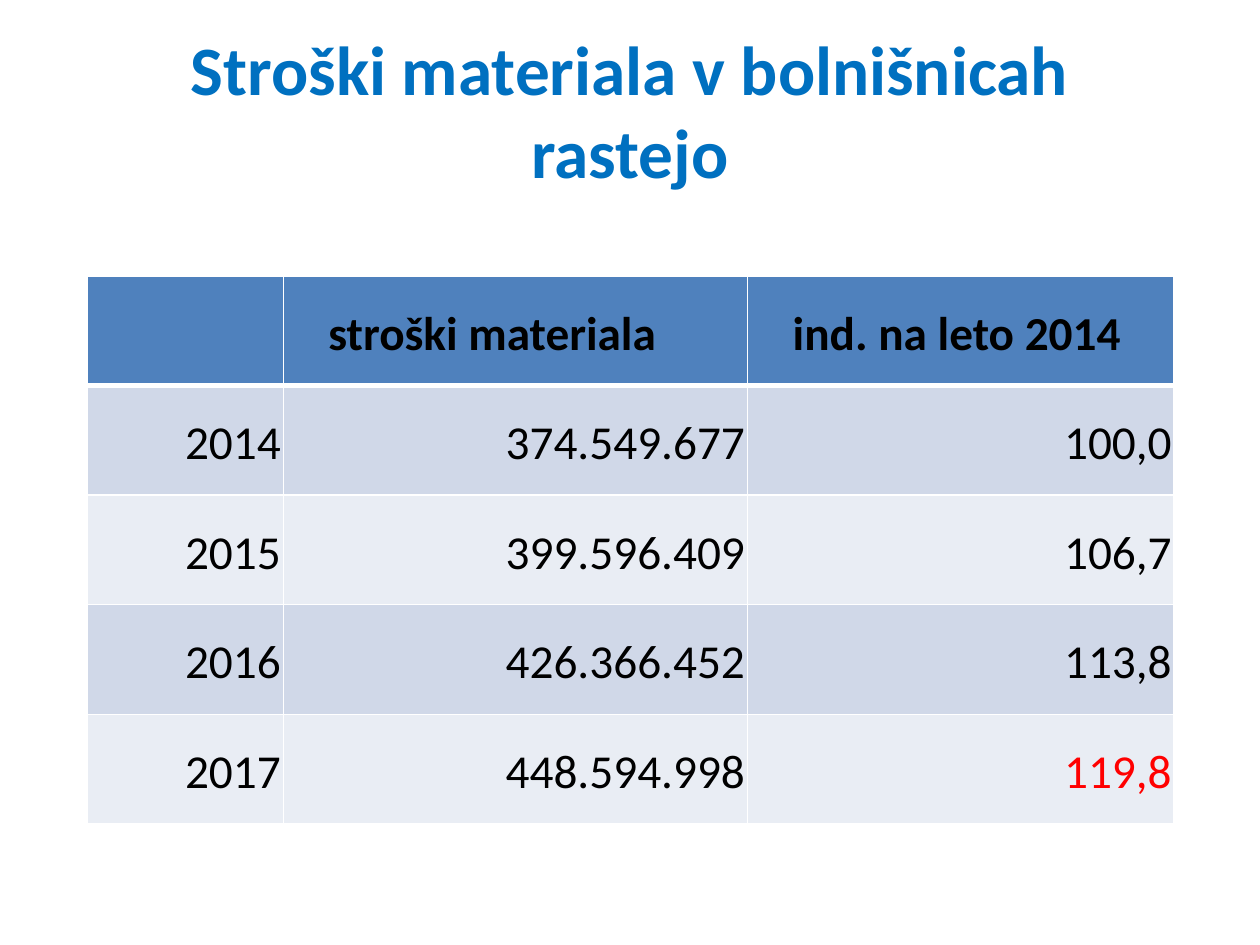
from dataclasses import dataclass

from lxml.etree import SubElement
from pptx import Presentation
from pptx.dml.color import RGBColor as RGB
from pptx.enum.text import MSO_ANCHOR as Anchor, PP_ALIGN as Align
from pptx.oxml.ns import qn
from pptx.util import Cm, Pt


@dataclass(frozen=True)
class Theme:
    font: str = "Calibri"
    title: str = "0070C0"
    text: str = "000000"
    alert: str = "FF0000"
    head: str = "4F81BD"
    bands: tuple = ("D0D8E8", "E9EDF4")
    rule: str = "FFFFFF"
    big: float = 39.6
    body: float = 27


class Deck:
    def __init__(self, theme):
        self.theme = theme
        self.prs = Presentation()
        self.prs.slide_width, self.prs.slide_height = Cm(25.4), Cm(19.05)
        self.slide = self.prs.slides.add_slide(self.prs.slide_layouts[6])

    def label(self, frame, text, size, color, bold, align):
        para = frame.paragraphs[0]
        para.alignment = align
        run = para.add_run()
        run.text = text
        form = {"name": self.theme.font, "size": Pt(size), "bold": bold}
        for key, val in form.items():
            setattr(run.font, key, val)
        run.font.color.rgb = RGB.from_string(color)

    def title(self, text, *box):
        frame = self.slide.shapes.add_textbox(*map(Cm, box)).text_frame
        frame.word_wrap = True
        frame.vertical_anchor = Anchor.MIDDLE
        self.label(frame, text, self.theme.big, self.theme.title, True, Align.CENTER)

    def edge(self, cell, base):
        props = cell._tc.get_or_add_tcPr()
        for side in "LRTB":
            width = Pt(base if side == "B" else 1)
            line = SubElement(props, qn(f"a:ln{side}"), w=str(width))
            fill = SubElement(line, qn("a:solidFill"))
            SubElement(fill, qn("a:srgbClr"), val=self.theme.rule)

    def cell(self, cell, text, fill, color, head):
        form = {
            "vertical_anchor": Anchor.BOTTOM,
            "margin_left": Cm(0.91),
            "margin_right": Cm(0.05),
            "margin_top": Cm(0.46),
            "margin_bottom": Cm(0.46),
        }
        for key, val in form.items():
            setattr(cell, key, val)
        self.edge(cell, 3 if head else 1)
        cell.fill.solid()
        cell.fill.fore_color.rgb = RGB.from_string(fill)
        if text:
            align = Align.LEFT if head else Align.RIGHT
            self.label(cell.text_frame, text, self.theme.body, color, head, align)

    def table(self, rows, left, top, widths, high, alert):
        size = Cm(sum(widths)), Cm(high * len(rows))
        shape = self.slide.shapes.add_table(
            len(rows), len(widths), Cm(left), Cm(top), *size)
        grid = shape.table
        for col, width in zip(grid.columns, widths):
            col.width = Cm(width)
        for r, row in enumerate(rows):
            grid.rows[r].height = Cm(high)
            fill = self.theme.bands[(r - 1) % 2] if r else self.theme.head
            for c, text in enumerate(row):
                color = self.theme.alert if (r, c) == alert else self.theme.text
                self.cell(grid.cell(r, c), text, fill, color, r == 0)


def main():
    deck = Deck(Theme())

    # Title
    deck.title("Stroški materiala v bolnišnicah rastejo", 1.75, 0.36, 21.9, 3.68)

    # Yearly costs, with the latest index in red
    costs = [
        ("", "stroški materiala", "ind. na leto 2014"),
        ("2014", "374.549.677", "100,0"),
        ("2015", "399.596.409", "106,7"),
        ("2016", "426.366.452", "113,8"),
        ("2017", "448.594.998", "119,8"),
    ]
    deck.table(costs, 1.75, 5.56, (3.96, 9.36, 8.6), 2.21, alert=(4, 2))

    deck.prs.save("out.pptx")


if __name__ == "__main__":
    main()
